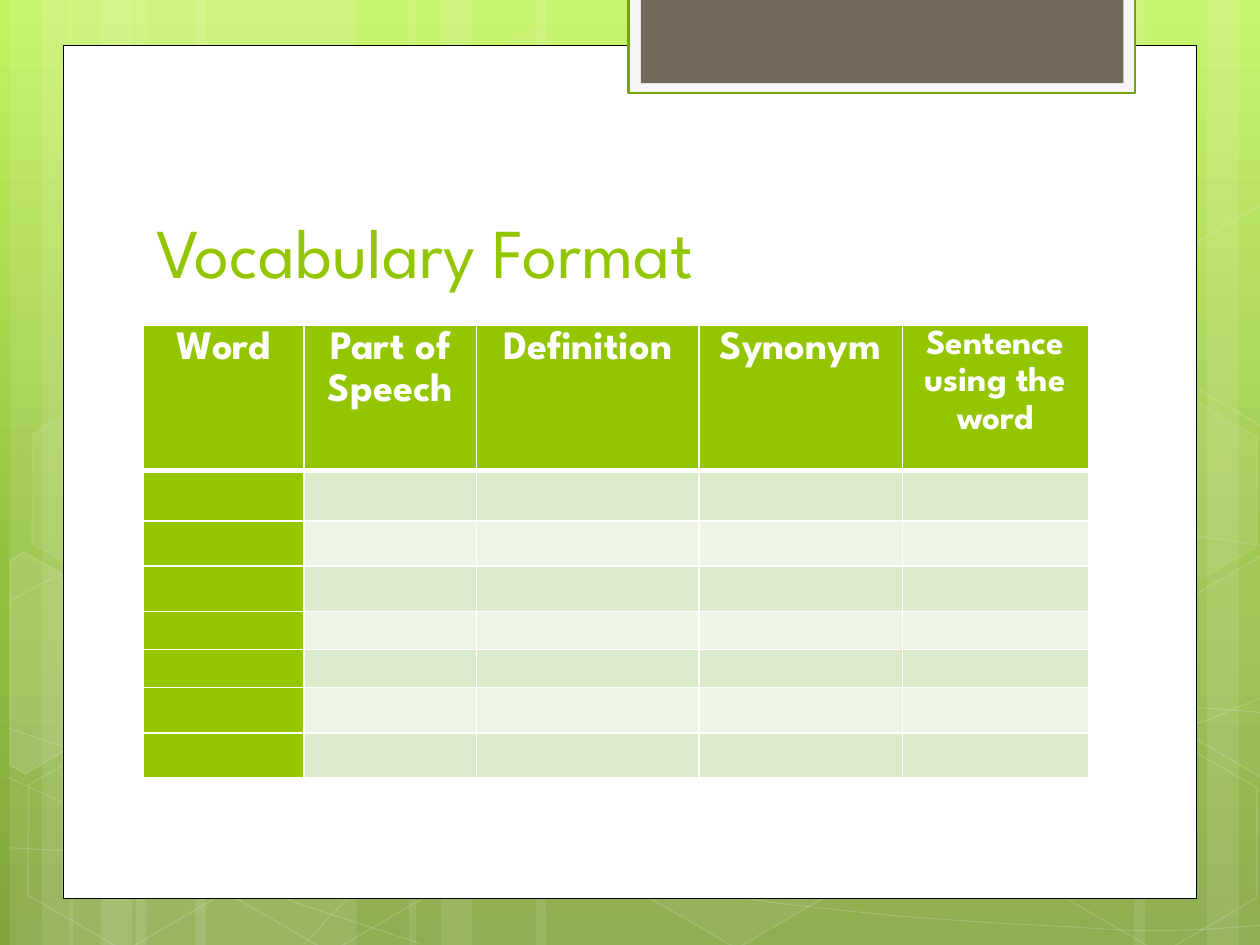
"""Build the Vocabulary Format slide with its green backdrop and blank word table."""
from copy import deepcopy
from dataclasses import dataclass
from math import cos, radians, sin

from lxml.etree import SubElement
from pptx import Presentation
from pptx.dml.color import RGBColor
from pptx.enum.shapes import MSO_SHAPE
from pptx.enum.text import MSO_ANCHOR, PP_ALIGN
from pptx.oxml.ns import qn
from pptx.util import Cm, Pt


@dataclass(frozen=True)
class Theme:
    font: str = "League Spartan"
    white: str = "FFFFFF"
    black: str = "000000"
    green: str = "94C600"
    frame_green: str = "74A510"
    frame_grey: str = "F5F5F5"
    tab_brown: str = "71685A"
    row_tints: tuple = ("DCEACC", "EEF5E7")
    backdrop: tuple = ((0, "C3F35F"), (0.62, "93BF3F"), (1, "81A53E"))
    title_size: int = 40
    header_size: int = 23
    small_header_size: int = 20
    empty_cell_size: int = 10


THEME = Theme()
SLIDE_WIDTH, SLIDE_HEIGHT = 25.4, 19.05
TILT = 30
BANDS = [(2.74, 4.45), (0.2, 1.27), (0.84, 2.12), (3.94, 4.45), (1.4, 1.27), (2.03, 2.12),
         (18.63, 4.45), (24.33, 1.27), (22.86, 2.12), (10.8, 7.83), (8.25, 1.27), (8.89, 2.12)]
WAVES = [
    [(0.18, 17.09), (1.55, 17.17), (2.92, 17.25), (4.83, 17.22), (6.73, 17.2), (9.09, 17.15),
     (11.63, 16.89), (14.17, 16.64), (17.78, 16.15), (20.12, 15.67), (22.43, 15.19),
     (24.82, 14.43), (25.58, 14)],
    [(0.18, 12.12), (0.91, 11.71), (1.65, 11.33), (3.07, 10.95), (4.52, 10.57), (6.58, 10.01),
     (8.81, 9.83), (11.07, 9.65), (13.82, 9.63), (16.61, 9.83), (19.41, 10.03),
     (24.05, 10.82), (25.58, 11.02)],
    [(0.15, 15.67), (3.23, 17.07), (6.27, 18.47), (8.48, 19.02)],
    [(0.18, 14.68), (0.97, 14.96), (1.78, 15.24), (3.25, 15.65), (4.72, 16.03), (6.93, 16.66),
     (9.07, 17.09), (11.18, 17.53), (13.84, 17.98), (15.95, 18.24), (18.06, 18.52),
     (20.32, 18.62), (21.67, 18.69), (22.99, 18.8), (23.34, 18.75), (24, 18.75),
     (24.66, 18.72), (25.12, 18.67), (25.58, 18.64)],
    [(6.15, 19.02), (6.6, 18.52), (7.06, 18.01), (7.67, 17.55), (8.28, 17.09), (9.14, 16.59),
     (9.86, 16.23), (10.57, 15.88), (11, 15.72), (11.94, 15.47), (12.85, 15.21),
     (14.55, 14.86), (15.44, 14.68), (16.36, 14.5), (16.48, 14.5), (17.27, 14.45),
     (18.06, 14.38), (19.3, 14.3), (20.17, 14.27), (21.06, 14.25), (22.5, 14.27),
     (22.5, 14.27), (23, 14.27), (23.6, 14.27), (24.21, 14.27), (24.66, 14.3),
     (25.1, 14.33), (25.55, 14.38)],
]
HEXAGONS = [(8.48, 0.91, 4, 8), (12.62, 14.96, 6, 12), (0.28, 15.01, 0, 12),
            (0.36, 7.92, 7, 8), (4.42, 15.04, 0, 12), (19.13, 11.51, 10, 12),
            (21.18, 15.06, 0, 12), (21.18, 7.98, 7, 8)]
LEFT_EDGE = [(0.2, 11.3), (0.48, 11.13), (2.44, 12.24), (2.41, 14.48), (0.51, 15.6), (0.2, 15.42)]
LEFT_CENTER = (0.91, 13.59)
RIGHT_EDGE = [(23.52, 12.32), (25.43, 11.2), (25.63, 11.33), (25.63, 15.57), (25.45, 15.67),
              (23.52, 14.55)]
RIGHT_CENTER = (25.02, 13.21)
EDGE_RISE = 7.08
HEADERS = ["Word", "Part of Speech", "Definition", "Synonym", "Sentence using the word"]
COLUMN_WIDTHS = [3.24, 3.48, 4.48, 4.1, 3.75]
ROW_HEIGHTS = [2.25, 1.02, 0.91, 0.91, 0.77, 0.77, 0.91, 0.91]


def apply_format(target, values):
    """Set each named attribute on the target."""
    for name, value in values.items():
        setattr(target, name, value)


def write_text(paragraph, text, size, color, bold=False):
    """Add one formatted run to the paragraph."""
    run = paragraph.add_run()
    run.text = text
    apply_format(run.font, {"name": THEME.font, "size": Pt(size), "bold": bold})
    run.font.color.rgb = RGBColor.from_string(color)


def paint_fill(fill, holder, color, opacity):
    """Fill with a colour at an opacity in percent, or leave empty at zero."""
    if not opacity:
        fill.background()
        return
    fill.solid()
    fill.fore_color.rgb = RGBColor.from_string(color)
    if opacity < 100:
        tint = holder.find(qn("a:solidFill")).find(qn("a:srgbClr"))
        SubElement(tint, qn("a:alpha"), val=str(opacity * 1000))


def paint(shape, fill=THEME.white, opacity=100, line=THEME.white, line_opacity=0, line_width=1):
    """Give a shape its fill and outline without a shadow."""
    shape.shadow.inherit = False
    properties = shape._element.spPr
    paint_fill(shape.fill, properties, fill, opacity)
    shape.line.width = Pt(line_width)
    paint_fill(shape.line.fill, properties.find(qn("a:ln")), line, line_opacity)


def add_block(slide, left, top, width, height, kind=MSO_SHAPE.RECTANGLE, **look):
    """Add a painted preset shape."""
    block = slide.shapes.add_shape(kind, Cm(left), Cm(top), Cm(width), Cm(height))
    paint(block, **look)
    return block


def add_outline(slide, points, close, **look):
    """Add a painted freeform through the points."""
    start, *rest = [(Cm(x), Cm(y)) for x, y in points]
    builder = slide.shapes.build_freeform(*start)
    builder.add_line_segments(rest, close=close)
    outline = builder.convert_to_shape()
    paint(outline, **look)
    return outline


def trace_curve(controls, steps=3):
    """Sample a chain of cubic curves that share their end points."""
    points = [controls[0]]
    for first in range(0, len(controls) - 1, 3):
        section = controls[first:first + 4]
        for step in range(1, steps + 1):
            t = step / steps
            weights = ((1 - t) ** 3, 3 * t * (1 - t) ** 2, 3 * t * t * (1 - t), t ** 3)
            points.append(tuple(sum(w * p[axis] for w, p in zip(weights, section))
                                for axis in (0, 1)))
    return points


def straighten(points, center):
    """Turn the points back by the tilt around the centre."""
    across, down = cos(radians(TILT)), sin(radians(TILT))
    offsets = [(x - center[0], y - center[1]) for x, y in points]
    return [(center[0] + x * across + y * down, center[1] + y * across - x * down)
            for x, y in offsets]


def add_backdrop(slide):
    """Draw the gradient, light bands, waves and hexagons."""
    fill = slide.background.fill
    fill.gradient()
    fill.gradient_angle = 270
    stop_list = slide._element.find(".//" + qn("a:gsLst"))
    stop_list.append(deepcopy(stop_list[-1]))
    for stop, (position, color) in zip(fill.gradient_stops, THEME.backdrop):
        stop.position = position
        stop.color.rgb = RGBColor.from_string(color)
    for left, width in BANDS:
        add_block(slide, left, 0, width, SLIDE_HEIGHT, opacity=10)
    for wave in WAVES:
        add_outline(slide, trace_curve(wave), False, opacity=0, line_opacity=20, line_width=0.5)
    for left, top, opacity, line_opacity in HEXAGONS:
        hexagon = add_block(slide, left, top, 4.45, 3.86, MSO_SHAPE.HEXAGON,
                            opacity=opacity, line_opacity=line_opacity)
        hexagon.adjustments[0] = 0.285
        hexagon.rotation = TILT
    for edge, center, rise, opacity in ((LEFT_EDGE, LEFT_CENTER, 0, 10),
                                        (RIGHT_EDGE, RIGHT_CENTER, 0, 4),
                                        (RIGHT_EDGE, RIGHT_CENTER, EDGE_RISE, 0)):
        points = [(x, y - rise) for x, y in straighten(edge, center)]
        add_outline(slide, points, True, opacity=opacity, line_opacity=12).rotation = TILT


def add_title(slide, text):
    """Add the slide title."""
    title = slide.shapes.add_textbox(Cm(2.9), Cm(2.84), Cm(19.51), Cm(3.18))
    apply_format(title.text_frame, {"word_wrap": True, "vertical_anchor": MSO_ANCHOR.BOTTOM})
    write_text(title.text_frame.paragraphs[0], text, THEME.title_size, THEME.green)


def style_cell(cell, fill, bottom_width=1):
    """Set a cell's margins, white borders and fill."""
    apply_format(cell, {"margin_left": Cm(0.15), "margin_right": Cm(0.15),
                        "margin_top": 0, "margin_bottom": 0})
    properties = cell._tc.get_or_add_tcPr()
    for side, width in (("L", 1), ("R", 1), ("T", 1), ("B", bottom_width)):
        border = SubElement(properties, qn(f"a:ln{side}"), w=str(Pt(width)))
        SubElement(SubElement(border, qn("a:solidFill")), qn("a:srgbClr"), val=THEME.white)
    cell.fill.solid()
    cell.fill.fore_color.rgb = RGBColor.from_string(fill)


def add_word_table(slide):
    """Add the vocabulary table with its headings and blank rows."""
    table = slide.shapes.add_table(
        len(ROW_HEIGHTS), len(HEADERS), Cm(2.89), Cm(6.56),
        Cm(sum(COLUMN_WIDTHS)), Cm(sum(ROW_HEIGHTS))).table
    apply_format(table, {"first_row": False, "horz_banding": False})
    for column, width in zip(table.columns, COLUMN_WIDTHS):
        column.width = Cm(width)
    for index, (row, height) in enumerate(zip(table.rows, ROW_HEIGHTS)):
        row.height = Cm(height)
        for position, (cell, heading) in enumerate(zip(row.cells, HEADERS)):
            paragraph = cell.text_frame.paragraphs[0]
            size = THEME.empty_cell_size
            if index == 0:
                style_cell(cell, THEME.green, bottom_width=3)
                apply_format(paragraph, {"alignment": PP_ALIGN.CENTER, "line_spacing": 1.15})
                size = THEME.small_header_size if heading == HEADERS[-1] else THEME.header_size
                write_text(paragraph, heading, size, THEME.white, bold=True)
            else:
                style_cell(cell, THEME.row_tints[(index - 1) % 2] if position else THEME.green)
            SubElement(paragraph._p, qn("a:endParaRPr"), sz=str(size * 100))


def main():
    """Build and save the slide."""
    deck = Presentation()
    apply_format(deck, {"slide_width": Cm(SLIDE_WIDTH), "slide_height": Cm(SLIDE_HEIGHT)})
    slide = deck.slides.add_slide(deck.slide_layouts[6])
    add_backdrop(slide)
    add_block(slide, 1.27, 0.91, 22.86, 17.2, line=THEME.black, line_opacity=100, line_width=0.5)
    add_block(slide, 12.67, -0.05, 10.21, 1.93, fill=THEME.frame_grey,
              line=THEME.frame_green, line_opacity=100, line_width=1.25)
    add_block(slide, 12.92, -0.05, 9.73, 1.73, fill=THEME.tab_brown)
    add_title(slide, "Vocabulary Format")
    add_word_table(slide)
    deck.save("out.pptx")


if __name__ == "__main__":
    main()
